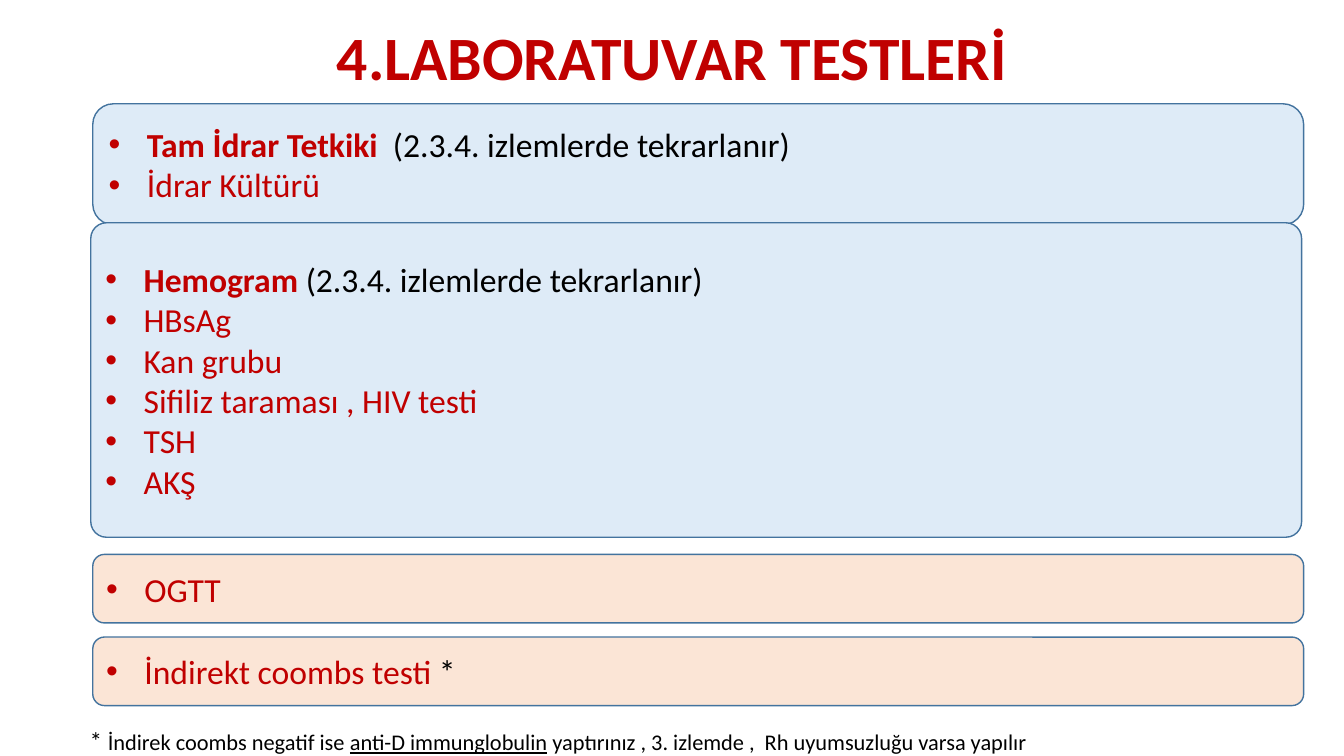
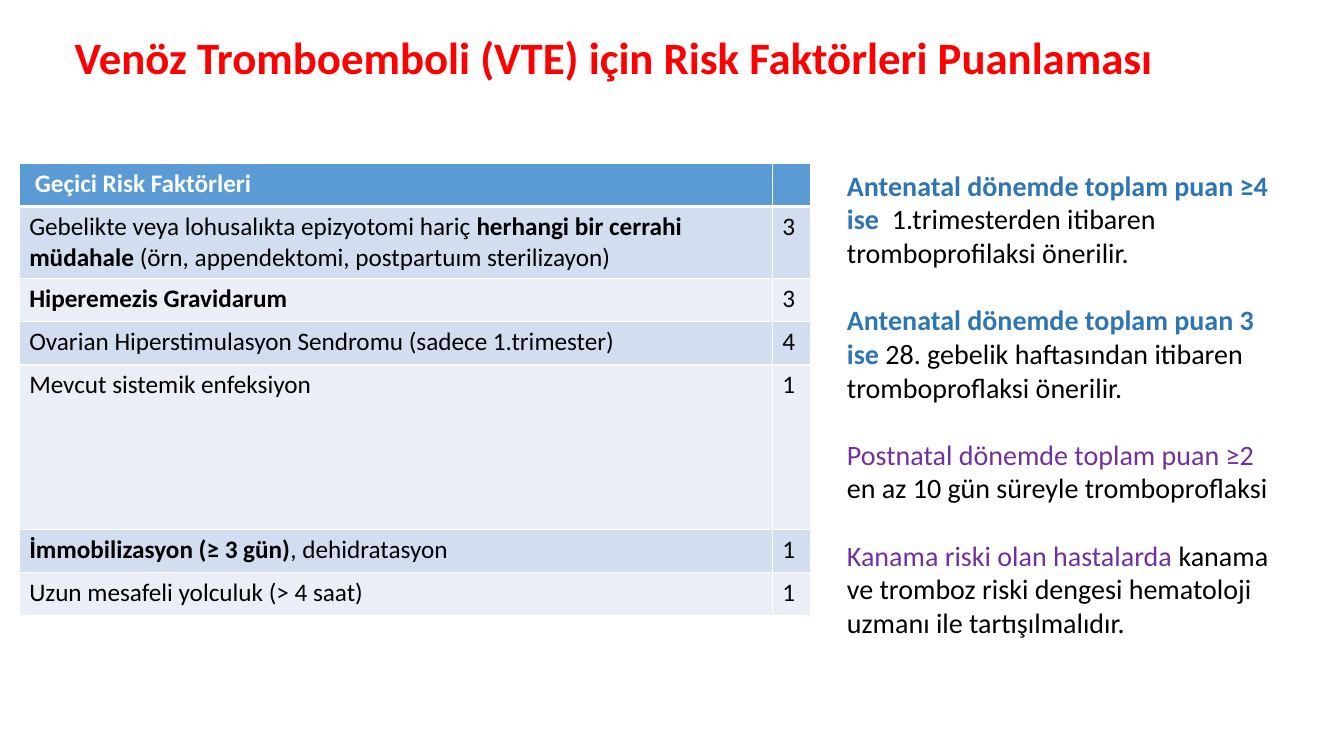
from dataclasses import dataclass
from typing import Optional

from lxml import etree
from pptx import Presentation
from pptx.dml.color import RGBColor
from pptx.enum.shapes import MSO_SHAPE
from pptx.enum.text import MSO_ANCHOR, MSO_AUTO_SIZE, PP_ALIGN
from pptx.oxml.ns import qn
from pptx.util import Inches, Pt

ROUNDED = MSO_SHAPE.ROUNDED_RECTANGLE
TOP, MIDDLE = MSO_ANCHOR.TOP, MSO_ANCHOR.MIDDLE
LEFT, CENTER = PP_ALIGN.LEFT, PP_ALIGN.CENTER
NO_AUTOFIT = MSO_AUTO_SIZE.NONE
TITLE_AND_BODY, TITLE_ONLY = 1, 5


@dataclass(frozen=True)
class Theme:
    """Colours, font and type sizes shared by the slides."""
    font: str = "Calibri"
    text: str = "000000"
    white: str = "FFFFFF"
    dark_red: str = "C00000"
    bright_red: str = "FF0000"
    blue: str = "2E75B6"
    purple: str = "7030A0"
    panel_blue: str = "DEEBF7"
    panel_peach: str = "FBE5D6"
    panel_line: str = "43739E"
    table_head: str = "5B9BD5"
    table_bands: tuple = ("D2DEEF", "EAEFF7")
    heading: int = 44
    long_heading: int = 32
    panel: int = 24
    advice: int = 20
    table: int = 18
    note: int = 16


THEME = Theme()


@dataclass(frozen=True)
class Span:
    """A stretch of text in one style."""
    text: str
    color: str = THEME.text
    bold: bool = False
    underline: bool = False
    size: Optional[int] = None


REPEATED = Span("(2.3.4. izlemlerde tekrarlanır)")


def red(text, bold=False):
    """Return a dark red span."""
    return Span(text, THEME.dark_red, bold)


URINE_TESTS = [[red("Tam İdrar Tetkiki  ", True), REPEATED], [red("İdrar Kültürü")]]
BLOOD_TESTS = [[red("Hemogram ", True), REPEATED]] + [
    [red(test)] for test in ("HBsAg", "Kan grubu", "Sifiliz taraması , HIV testi", "TSH", "AKŞ")]
GLUCOSE_TEST = [[red("OGTT")]]
COOMBS_TEST = [[red("İndirekt coombs testi "), Span("*")]]
COOMBS_NOTE = [
    Span("* ", size=18),
    Span("İndirek coombs negatif ise "),
    Span("anti-D immunglobulin", underline=True),
    Span(" yaptırınız , 3. izlemde ,  Rh uyumsuzluğu varsa yapılır"),
]
RISK_FACTORS = [
    ([Span("Gebelikte veya lohusalıkta epizyotomi hariç "),
      Span("herhangi bir cerrahi müdahale ", bold=True),
      Span("(örn, appendektomi, postpartuım sterilizayon)")], 3),
    ([Span("Hiperemezis Gravidarum", bold=True)], 3),
    ([Span("Ovarian Hiperstimulasyon Sendromu (sadece 1.trimester)")], 4),
    ([Span("Mevcut sistemik enfeksiyon")], 1),
    ([Span("İmmobilizasyon (≥ 3 gün)", bold=True), Span(", dehidratasyon")], 1),
    ([Span("Uzun mesafeli yolculuk (> 4 saat)")], 1),
]
ADVICE = [
    [[Span("Antenatal dönemde toplam puan ≥4 ise  ", THEME.blue, True),
      Span("1.trimesterden itibaren")],
     [Span("tromboprofilaksi önerilir.")]],
    [[Span("Antenatal dönemde toplam puan 3 ise ", THEME.blue, True),
      Span("28. gebelik haftasından itibaren tromboproflaksi önerilir.")]],
    [[Span("Postnatal dönemde toplam puan ≥2 ", THEME.purple),
      Span("en az 10 gün süreyle tromboproflaksi")]],
    [[Span("Kanama riski olan hastalarda ", THEME.purple),
      Span("kanama ve tromboz riski dengesi hematoloji")],
     [Span("uzmanı ile tartışılmalıdır.")]],
]


def rgb(color):
    """Turn a hex string into a colour."""
    return RGBColor.from_string(color)


def place(shape, left, top, width, height):
    """Set position and size in inches."""
    shape.left, shape.top = Inches(left), Inches(top)
    shape.width, shape.height = Inches(width), Inches(height)


def write(paragraph, spans, size):
    """Add the spans to a paragraph run by run."""
    for span in spans:
        run = paragraph.add_run()
        run.text = span.text
        font = run.font
        font.name, font.size = THEME.font, Pt(span.size or size)
        font.bold, font.underline = span.bold, span.underline
        font.color.rgb = rgb(span.color)


def next_paragraph(frame, index):
    """Return the first paragraph, or add a further one."""
    return frame.add_paragraph() if index else frame.paragraphs[0]


def set_bullet(paragraph, char=None, indent=0.0):
    """Give a paragraph a hanging bullet, or none."""
    properties = paragraph._p.get_or_add_pPr()
    properties.set("marL", str(Inches(indent)))
    properties.set("indent", str(-Inches(indent)))
    if char:
        etree.SubElement(properties, qn("a:buFont")).set("typeface", "Arial")
        etree.SubElement(properties, qn("a:buChar")).set("char", char)
    else:
        etree.SubElement(properties, qn("a:buNone"))


def set_title(slide, box, span, size, align, anchor, line_spacing=1.0):
    """Place and fill the title placeholder."""
    title = slide.shapes.title
    place(title, *box)
    frame = title.text_frame
    frame.word_wrap, frame.auto_size = True, NO_AUTOFIT
    frame.vertical_anchor = anchor
    paragraph = frame.paragraphs[0]
    paragraph.alignment, paragraph.line_spacing = align, line_spacing
    write(paragraph, [span], size)


def add_panel(slide, box, fill, items, corner=0.17):
    """Add a rounded panel with a bulleted list."""
    panel = slide.shapes.add_shape(ROUNDED, *map(Inches, box))
    panel.shadow.inherit = False
    panel.adjustments[0] = corner
    panel.fill.solid()
    panel.fill.fore_color.rgb = rgb(fill)
    panel.line.color.rgb = rgb(THEME.panel_line)
    panel.line.width = Pt(1)
    frame = panel.text_frame
    frame.word_wrap, frame.vertical_anchor = True, MIDDLE
    for index, spans in enumerate(items):
        paragraph = next_paragraph(frame, index)
        paragraph.alignment = LEFT
        set_bullet(paragraph, "•", 0.38)
        write(paragraph, spans, THEME.panel)


def add_note(slide, box, spans):
    """Add a footnote text box."""
    frame = slide.shapes.add_textbox(*map(Inches, box)).text_frame
    frame.word_wrap = True
    write(frame.paragraphs[0], spans, THEME.note)


def style_cell(cell, fill, bottom=1):
    """Give a cell white borders and a plain fill."""
    properties = cell._tc.get_or_add_tcPr()
    for side, width in (("L", 1), ("R", 1), ("T", 1), ("B", bottom)):
        border = etree.SubElement(properties, qn(f"a:ln{side}"), w=str(Pt(width)))
        solid = etree.SubElement(border, qn("a:solidFill"))
        etree.SubElement(solid, qn("a:srgbClr"), val=THEME.white)
    cell.fill.solid()
    cell.fill.fore_color.rgb = rgb(fill)


def add_score_table(slide, box, heading, factors, widths, heights):
    """Add the table of risk factors and their scores."""
    table = slide.shapes.add_table(len(factors) + 1, 2, *map(Inches, box)).table
    for column, width in zip(table.columns, widths):
        column.width = Inches(width)
    for row, height in zip(table.rows, heights):
        row.height = Inches(height)
    for cell in table.rows[0].cells:
        style_cell(cell, THEME.table_head, bottom=3)
    write(table.cell(0, 0).text_frame.paragraphs[0],
          [Span(heading, THEME.white, True)], THEME.table)
    for index, (factor, score) in enumerate(factors):
        for cell, spans in zip(table.rows[index + 1].cells, (factor, [Span(str(score))])):
            style_cell(cell, THEME.table_bands[index % 2])
            write(cell.text_frame.paragraphs[0], spans, THEME.table)


def fill_advice(slide, box, groups):
    """Fill the body placeholder with spaced groups of lines."""
    body = slide.placeholders[1]
    place(body, *box)
    frame = body.text_frame
    frame.word_wrap, frame.auto_size = True, NO_AUTOFIT
    for group_index, group in enumerate(groups):
        for line_index, spans in enumerate(group):
            paragraph = next_paragraph(frame, group_index + line_index)
            starts_group = group_index and not line_index
            paragraph.space_before = Pt(24 if starts_group else 0)
            set_bullet(paragraph)
            write(paragraph, spans, THEME.advice)


def build_laboratory_slide(deck):
    """Build the slide of laboratory tests."""
    slide = deck.slides.add_slide(deck.slide_layouts[TITLE_ONLY])
    set_title(slide, (0.92, 0.17, 11.5, 0.86), red("4.LABORATUVAR TESTLERİ", True),
              THEME.heading, CENTER, MIDDLE, 0.9)
    left, width = 0.92, 12.01
    add_panel(slide, (left, 1.03, width, 1.2), THEME.panel_blue, URINE_TESTS)
    add_panel(slide, (0.9, 2.21, width, 3.12), THEME.panel_blue, BLOOD_TESTS, 0.05)
    for top, items in ((5.5, GLUCOSE_TEST), (6.32, COOMBS_TEST)):
        add_panel(slide, (left, top, width, 0.68), THEME.panel_peach, items)
    add_note(slide, (0.79, 7.15, 12.14, 0.4), COOMBS_NOTE)


def build_risk_slide(deck):
    """Build the slide of thromboembolism risk scores."""
    slide = deck.slides.add_slide(deck.slide_layouts[TITLE_AND_BODY])
    heading = Span("Venöz Tromboemboli (VTE) için Risk Faktörleri Puanlaması",
                   THEME.bright_red, True)
    set_title(slide, (0.64, 0.24, 11.17, 0.94), heading, THEME.long_heading, LEFT, TOP)
    heights = [0.43] * 4 + [1.63] + [0.43] * 2
    add_score_table(slide, (0.19, 1.62, 7.85, sum(heights)), " Geçici Risk Faktörleri",
                    RISK_FACTORS, (7.47, 0.38), heights)
    fill_advice(slide, (8.3, 1.62, 4.5, 5.08), ADVICE)


def main():
    """Build and save the presentation."""
    deck = Presentation()
    deck.slide_width, deck.slide_height = Inches(13.33), Inches(7.5)
    build_laboratory_slide(deck)
    build_risk_slide(deck)
    deck.save("out.pptx")


if __name__ == "__main__":
    main()
